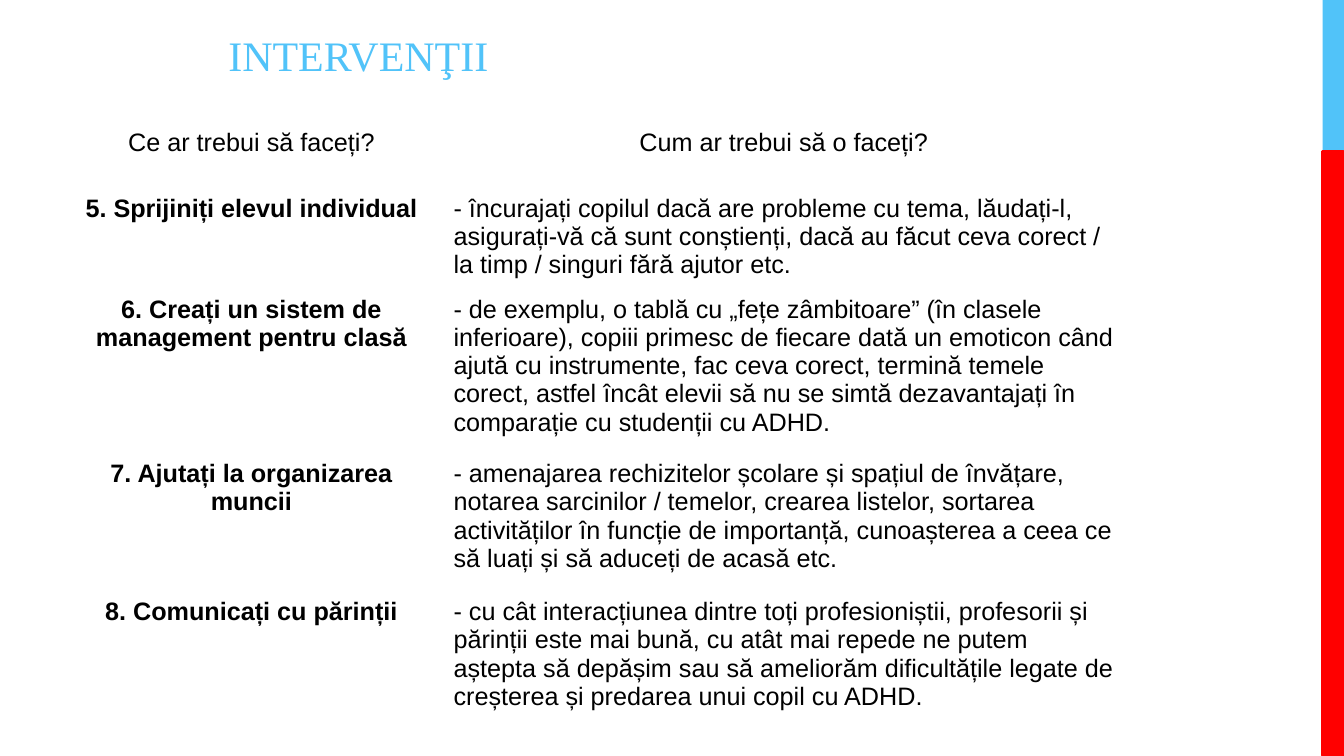
from pptx import Presentation
from pptx.dml.color import RGBColor
from pptx.enum.shapes import MSO_SHAPE
from pptx.enum.text import MSO_ANCHOR, PP_ALIGN
from pptx.util import Pt

SKY = RGBColor(0x51, 0xC3, 0xF9)
RED = RGBColor(0xFF, 0x00, 0x00)
BLACK = RGBColor(0x00, 0x00, 0x00)

ADVICE = [
    ("Ce ar trebui să faceți?", "Cum ar trebui să o faceți?"),
    ("5. Sprijiniți elevul individual",
     "- încurajați copilul dacă are probleme cu tema, lăudați-l, asigurați-vă că sunt "
     "conștienți, dacă au făcut ceva corect / la timp / singuri fără ajutor etc."),
    ("6. Creați un sistem de management pentru clasă",
     "- de exemplu, o tablă cu „fețe zâmbitoare” (în clasele inferioare), copiii primesc "
     "de fiecare dată un emoticon când ajută cu instrumente, fac ceva corect, termină "
     "temele corect, astfel încât elevii să nu se simtă dezavantajați în comparație cu "
     "studenții cu ADHD."),
    ("7. Ajutați la organizarea muncii",
     "- amenajarea rechizitelor școlare și spațiul de învățare, notarea sarcinilor / "
     "temelor, crearea listelor, sortarea activităților în funcție de importanță, "
     "cunoașterea a ceea ce să luați și să aduceți de acasă etc."),
    ("8. Comunicați cu părinții",
     "- cu cât interacțiunea dintre toți profesioniștii, profesorii și părinții este mai "
     "bună, cu atât mai repede ne putem aștepta să depășim sau să ameliorăm dificultățile "
     "legate de creșterea și predarea unui copil cu ADHD."),
]
COLUMN_WIDTHS = [274.4, 486]
ROW_HEIGHTS = [46.8, 67, 117.4, 98.6, 98.6]

deck = Presentation()
deck.slide_width, deck.slide_height = Pt(960), Pt(540)
slide = deck.slides.add_slide(deck.slide_layouts[6])

# Side band
for top, height, color in [(0, 108, SKY), (108, 432, RED)]:
    band = slide.shapes.add_shape(
        MSO_SHAPE.RECTANGLE, Pt(944.8), Pt(top), Pt(15.2), Pt(height))
    band.shadow.inherit = False
    band.fill.solid()
    band.fill.fore_color.rgb = color
    if color == RED:
        band.line.color.rgb = RED
        band.line.width = Pt(2.25)
    else:
        band.line.fill.background()

# Title
title = slide.shapes.add_textbox(Pt(156), Pt(15), Pt(456), Pt(54)).text_frame
title.word_wrap = True
title.margin_top = Pt(6)
heading = title.paragraphs[0]
heading.text = "INTERVENŢII"
heading.font.name = "Times New Roman"
heading.font.size = Pt(30)
heading.font.color.rgb = SKY

# Advice table
table = slide.shapes.add_table(
    len(ADVICE), len(COLUMN_WIDTHS), Pt(42.4), Pt(88.6),
    Pt(sum(COLUMN_WIDTHS)), Pt(sum(ROW_HEIGHTS))).table
table.first_row = False
table.horz_banding = False
for column, width in zip(table.columns, COLUMN_WIDTHS):
    column.width = Pt(width)
for r, (height, texts) in enumerate(zip(ROW_HEIGHTS, ADVICE)):
    table.rows[r].height = Pt(height)
    for c, text in enumerate(texts):
        cell = table.cell(r, c)
        cell.fill.background()
        cell.vertical_anchor = MSO_ANCHOR.TOP
        paragraph = cell.text_frame.paragraphs[0]
        paragraph.text = text
        paragraph.alignment = PP_ALIGN.CENTER if r == 0 or c == 0 else PP_ALIGN.LEFT
        paragraph.font.name = "Arial"
        paragraph.font.size = Pt(18)
        paragraph.font.bold = r > 0 and c == 0
        paragraph.font.color.rgb = BLACK

# The default table style draws white cell borders, invisible on the white slide
deck.save("out.pptx")
